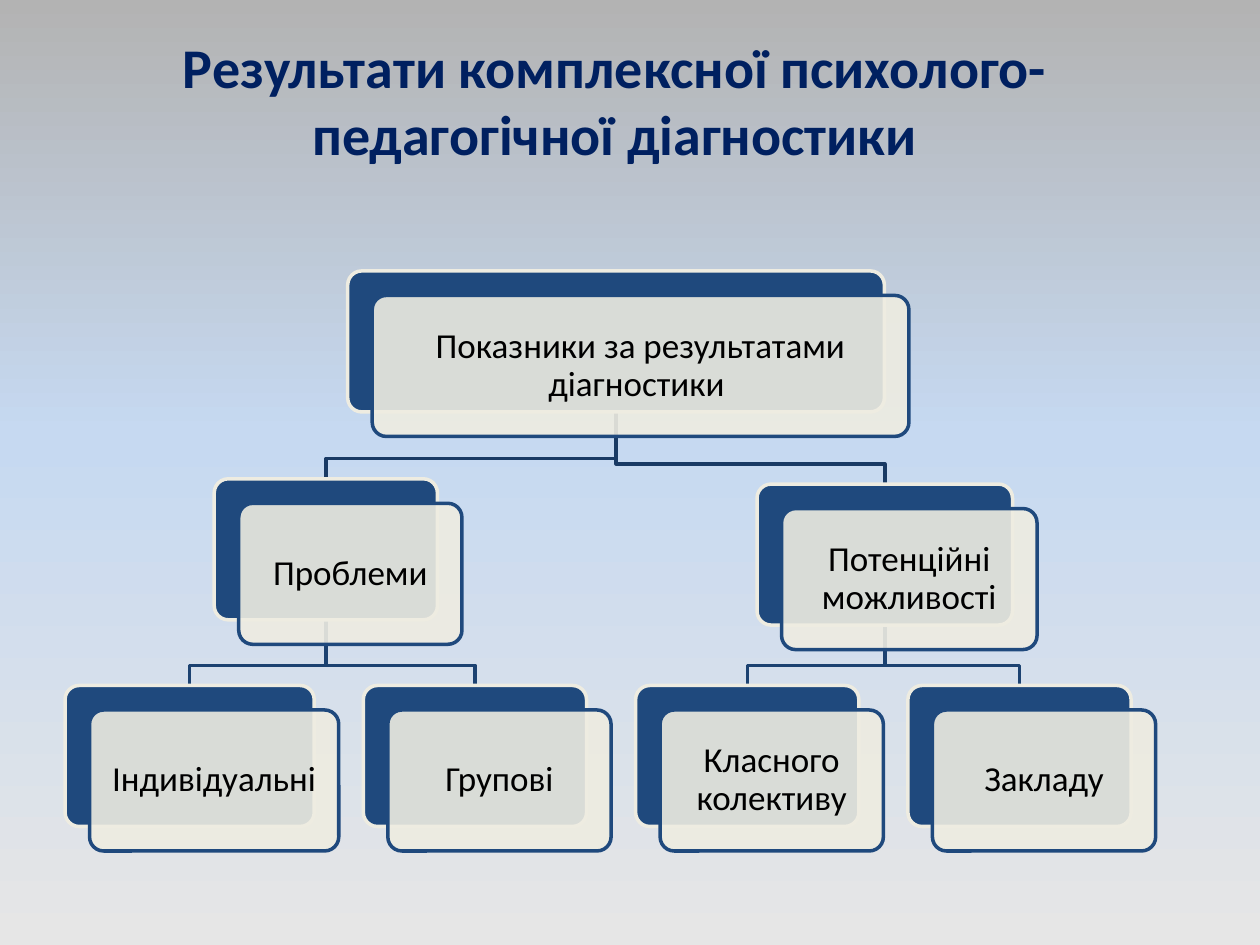
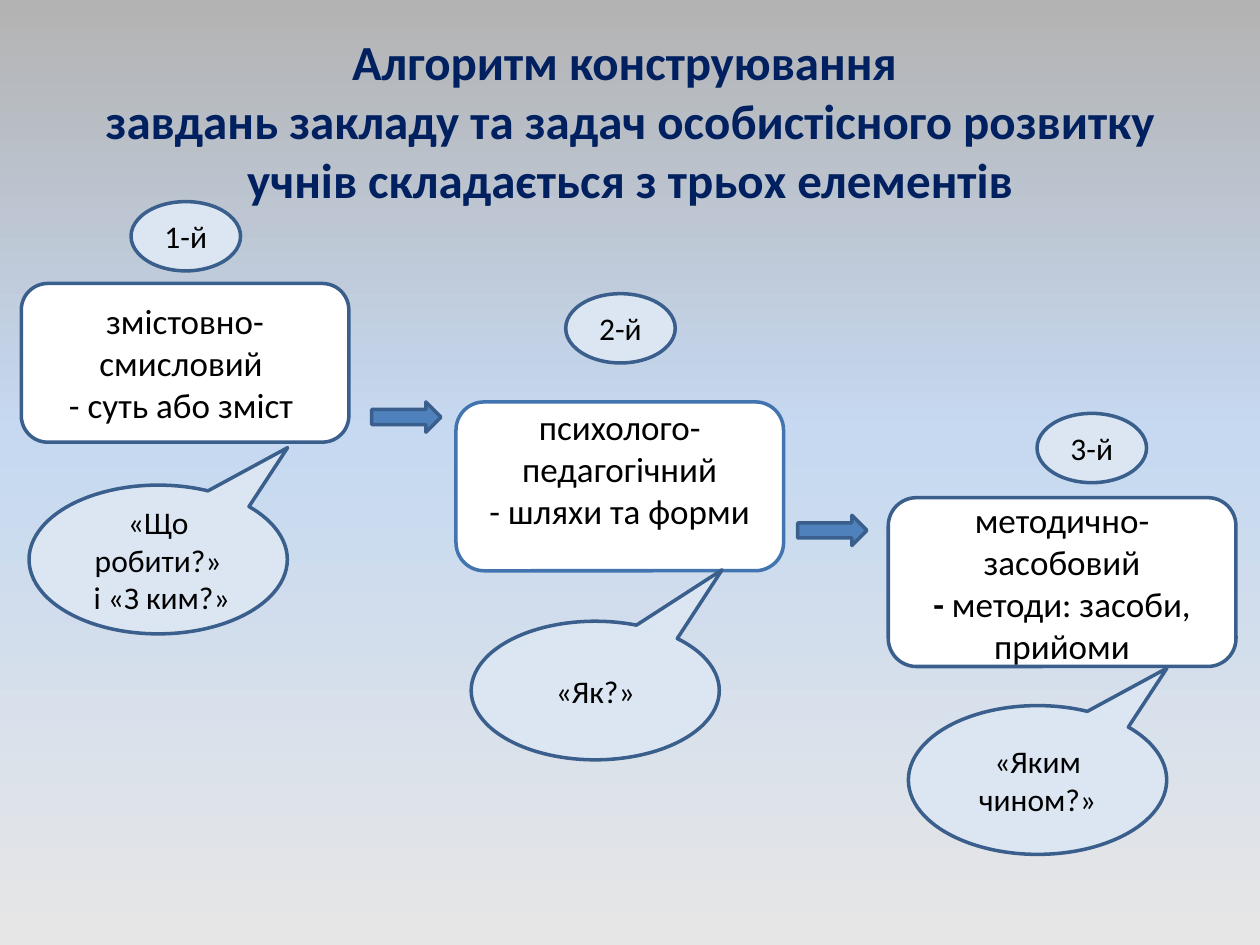
from copy import deepcopy
from dataclasses import dataclass

from lxml.etree import SubElement
from pptx import Presentation
from pptx.dml.color import RGBColor
from pptx.enum.shapes import MSO_SHAPE
from pptx.enum.text import MSO_ANCHOR, MSO_AUTO_SIZE, PP_ALIGN
from pptx.oxml.ns import qn
from pptx.util import Pt

FONT = "Calibri"
NAVY, BLACK, WHITE = "002060", "000000", "FFFFFF"
DARK_BLUE, CREAM = "1F497D", "EEECE1"
PALE_BLUE, ARROW_BLUE, OUTLINE = "DCE6F2", "4F81BD", "3A5F8C"
BACKDROP = [(0, "B3B3B3"), (46, "C6D9F1"), (100, "E6E6E6")]

# Tree of diagnostic results
NODE_HEIGHT, LAYER_SHIFT, LEAF_GAP, BEND_RISE = 80.6, 14, 28, 11.5

# Steps of the algorithm
BADGE_SIZE = (62.6, 39.6)
ARROW_SIZE = (39.6, 17.3)


@dataclass
class Step:
    """A card and its satellites, which are placed from the card's corner."""
    number: str
    card: tuple
    lines: list
    badge_at: tuple
    question: list
    callout: tuple
    pointer: tuple = (0.501, -0.752)
    arrow_at: tuple = None
    outline: str = OUTLINE
    bottom_inset: float = 3.6
    bold_lead: str = ""


STEPS = [
    Step("1-й", (12.2, 162, 187.2, 90.7),
         ["змістовно-смисловий ", "- суть або зміст "], (62.7, -46.8),
         ["«Що робити?»", " і «З ким?»"], (4.4, 115.2, 147.6, 85),
         arrow_at=(200.2, 67.7)),
    Step("2-й", (260.6, 229.7, 187.2, 96.5),
         ["психолого-педагогічний", "- шляхи та форми"], (62.7, -61.9),
         ["«Як?»"], (8.7, 125.3, 141.8, 79.2), pointer=(0.511, -0.871),
         arrow_at=(195.2, 64.8), outline="4274AF", bottom_inset=24),
    Step("3-й", (507.6, 284.4, 198.7, 96.5),
         ["методично-засобовий", "- методи: засоби, прийоми"], (85, -48.2),
         ["«Яким чином?»"], (11.5, 118.8, 147.6, 85), bold_lead="- "),
]


def color(hex_code):
    return RGBColor.from_string(hex_code)


def write(frame, paragraphs, *, size, ink=BLACK, bold=False, bold_lead="",
          anchor=MSO_ANCHOR.MIDDLE, spacing=None, insets=(7.2, 3.6, 7.2, 3.6)):
    """Fill a text frame; a vertical tab in a paragraph breaks the line."""
    frame.word_wrap = True
    frame.auto_size = MSO_AUTO_SIZE.NONE
    frame.vertical_anchor = anchor
    (frame.margin_left, frame.margin_top,
     frame.margin_right, frame.margin_bottom) = map(Pt, insets)
    for index, text in enumerate(paragraphs):
        paragraph = frame.paragraphs[0] if index == 0 else frame.add_paragraph()
        paragraph.alignment = PP_ALIGN.CENTER
        paragraph.line_spacing = spacing
        has_lead = bold_lead and text.startswith(bold_lead)
        pieces = [(bold_lead, True), (text[len(bold_lead):], bold)] if has_lead else [(text, bold)]
        for piece, is_bold in pieces:
            for line_number, line in enumerate(piece.split("\v")):
                if line_number:
                    paragraph.add_line_break()
                run = paragraph.add_run()
                run.text = line
                run.font.name = FONT
                run.font.size = Pt(size)
                run.font.bold = is_bold
                run.font.color.rgb = color(ink)


def add_figure(slide, preset, box, fill, outline=OUTLINE, adjustments=(), alpha=None):
    figure = slide.shapes.add_shape(preset, *map(Pt, box))
    figure.shadow.inherit = False
    figure.fill.solid()
    figure.fill.fore_color.rgb = color(fill)
    if alpha is not None:
        srgb = figure.fill._xPr.find(".//" + qn("a:srgbClr"))
        SubElement(srgb, qn("a:alpha"), val=str(alpha * 1000))
    figure.line.color.rgb = color(outline)
    figure.line.width = Pt(2)
    for index, value in enumerate(adjustments):
        figure.adjustments[index] = value
    return figure


def paint_backdrop(master):
    fill = master.background.fill
    fill.gradient()
    fill.gradient_angle = 270
    stops = master.background._cSld.find(".//" + qn("a:gsLst"))
    for stop in list(stops):
        stops.remove(stop)
    for position, hex_code in BACKDROP:
        stop = SubElement(stops, qn("a:gs"), pos=str(position * 1000))
        SubElement(stop, qn("a:srgbClr"), val=hex_code)


def add_titled_slide(prs, title, box, size, anchor):
    slide = prs.slides.add_slide(prs.slide_layouts[5])
    heading = slide.shapes.title
    heading.left, heading.top, heading.width, heading.height = map(Pt, box)
    write(heading.text_frame, [title], size=size, ink=NAVY, bold=True, anchor=anchor)
    return slide


def add_branch(slide, parent, child, ink):
    """Elbow from the bottom centre of the parent to the top centre of the child."""
    start_x, start_y = parent[0] + parent[2] / 2, parent[1] + NODE_HEIGHT
    end_x, end_y = child[0] + child[2] / 2, child[1]
    bend_y = end_y - BEND_RISE
    builder = slide.shapes.build_freeform(Pt(start_x), Pt(start_y))
    corners = [(start_x, bend_y), (end_x, bend_y), (end_x, end_y)]
    builder.add_line_segments([(Pt(x), Pt(y)) for x, y in corners], close=False)
    branch = builder.convert_to_shape()
    branch.shadow.inherit = False
    branch.fill.background()
    branch.line.color.rgb = color(ink)
    branch.line.width = Pt(2)


def add_node(slide, box, label):
    left, top, width, height = box
    add_figure(slide, MSO_SHAPE.ROUNDED_RECTANGLE, box, DARK_BLUE, CREAM, [0.1])
    front = add_figure(slide, MSO_SHAPE.ROUNDED_RECTANGLE,
                       (left + LAYER_SHIFT, top + LAYER_SHIFT, width, height),
                       CREAM, DARK_BLUE, [0.1], alpha=90)
    write(front.text_frame, [label], size=20, spacing=0.9, insets=(5.8,) * 4)


def add_results_tree(slide, left, top):
    def node_box(x, y, width):
        return left + x, top + y, width, NODE_HEIGHT

    root = node_box(161.5, 0, 306.7)
    problems = node_box(85.2, 118.8, 127.6)
    potential = node_box(395.4, 121.8, 146)
    leaves, x = [], 0
    for width in (142.4, 127.6, 127.6, 127.6):
        leaves.append(node_box(x, 236.9, width))
        x += width + LEAF_GAP

    # Branches lie behind the nodes
    for parent, children, ink in [(potential, leaves[2:], "1C4271"),
                                  (problems, leaves[:2], "1C4271"),
                                  (root, [problems, potential], "193A64")]:
        for child in children:
            add_branch(slide, parent, child, ink)

    labels = ["Показники за результатами діагностики ", "Проблеми",
              "Потенційні можливості", "Індивідуальні", "Групові",
              "Класного колективу", "Закладу"]
    for box, label in zip([root, problems, potential, *leaves], labels):
        add_node(slide, box, label)


def add_step(slide, step):
    left, top = step.card[:2]

    def beside_card(offset, size):
        return left + offset[0], top + offset[1], *size

    card = add_figure(slide, MSO_SHAPE.ROUNDED_RECTANGLE, step.card, WHITE, step.outline)
    write(card.text_frame, step.lines, size=20, bold_lead=step.bold_lead,
          insets=(7.2, 3.6, 7.2, step.bottom_inset))
    badge = add_figure(slide, MSO_SHAPE.OVAL,
                       beside_card(step.badge_at, BADGE_SIZE), PALE_BLUE)
    write(badge.text_frame, [step.number], size=18)
    callout = add_figure(slide, MSO_SHAPE.OVAL_CALLOUT,
                         beside_card(step.callout[:2], step.callout[2:]),
                         PALE_BLUE, adjustments=step.pointer)
    write(callout.text_frame, step.question, size=18)
    if step.arrow_at:
        add_figure(slide, MSO_SHAPE.RIGHT_ARROW,
                   beside_card(step.arrow_at, ARROW_SIZE), ARROW_BLUE)


def main():
    prs = Presentation()
    prs.slide_width, prs.slide_height = Pt(720), Pt(540)
    paint_backdrop(prs.slide_master)

    # Results of the diagnostics
    results = add_titled_slide(
        prs, "Результати комплексної психолого-педагогічної діагностики",
        (42.5, 15.1, 617.8, 85), 32, MSO_ANCHOR.TOP)
    add_results_tree(results, 37.2, 154.8)

    # Three elements of the algorithm
    algorithm = add_titled_slide(
        prs, "Алгоритм конструювання \vзавдань закладу та задач особистісного "
             "розвитку учнів складається з трьох елементів",
        (36, 21.6, 648, 93.6), 28, MSO_ANCHOR.MIDDLE)
    for step in STEPS:
        add_step(algorithm, step)

    prs.save("out.pptx")


if __name__ == "__main__":
    main()
